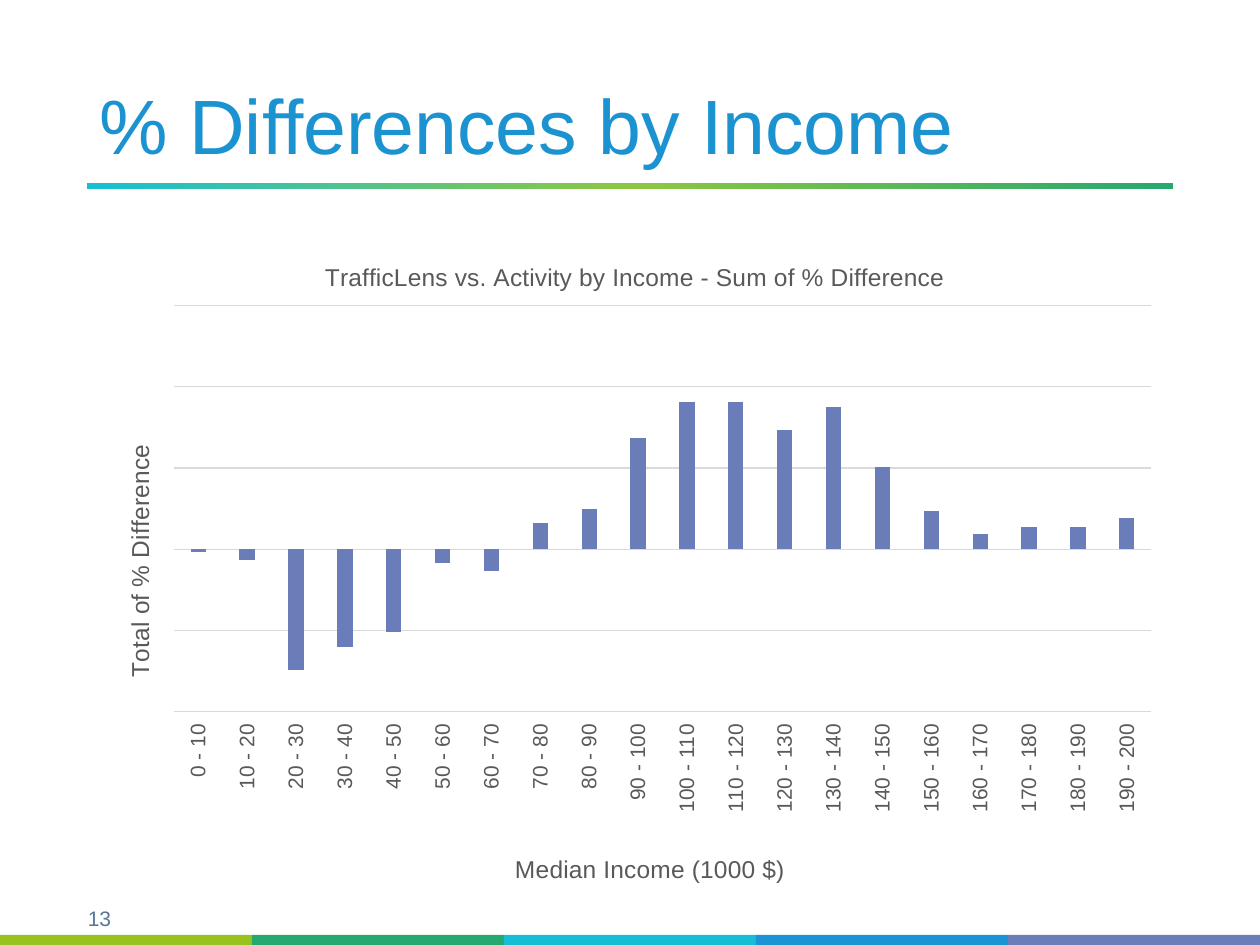
"""Build the slide on percentage differences by income."""
from copy import deepcopy

from lxml import etree
from pptx import Presentation
from pptx.chart.data import CategoryChartData
from pptx.dml.color import RGBColor
from pptx.enum.chart import XL_CHART_TYPE, XL_TICK_LABEL_POSITION, XL_TICK_MARK
from pptx.enum.shapes import MSO_SHAPE
from pptx.enum.text import MSO_ANCHOR, PP_ALIGN
from pptx.oxml.ns import qn
from pptx.util import Inches, Pt

COLUMN = XL_CHART_TYPE.COLUMN_CLUSTERED
LABELS_LOW = XL_TICK_LABEL_POSITION.LOW
LABELS_NONE = XL_TICK_LABEL_POSITION.NONE
TICKS_NONE = XL_TICK_MARK.NONE
RECTANGLE = MSO_SHAPE.RECTANGLE
BOTTOM = MSO_ANCHOR.BOTTOM
LEFT, CENTER = PP_ALIGN.LEFT, PP_ALIGN.CENTER

TITLE_BLUE = RGBColor(0x1C, 0x93, 0xD1)
NUMBER_BLUE = RGBColor(0x59, 0x77, 0x94)
COLUMN_BLUE = RGBColor(0x6B, 0x7D, 0xB8)
TEXT_GREY = RGBColor(0x59, 0x59, 0x59)
GRID_GREY = RGBColor(0xD9, 0xD9, 0xD9)
RULE_COLORS = [RGBColor(0x16, 0xBF, 0xD4), RGBColor(0x8D, 0xC7, 0x3F), RGBColor(0x26, 0xA8, 0x71)]
BAND_COLORS = [
    RGBColor(0x98, 0xC3, 0x1F),
    RGBColor(0x26, 0xA8, 0x71),
    RGBColor(0x16, 0xBE, 0xD5),
    RGBColor(0x1C, 0x93, 0xD2),
    RGBColor(0x6B, 0x7D, 0xB9),
]

MARGIN, CONTENT_WIDTH = 0.69, 8.62
GRID_STEP = 55
VERTICAL = "-5400000"
DIFFERENCES = [-2, -7, -82, -66, -56, -9, -15, 18, 27, 75,
               100, 100, 81, 96, 56, 26, 10, 15, 15, 21]


def set_all(target, values):
    """Set each attribute in a dict of format values."""
    for name, value in values.items():
        setattr(target, name, value)


def set_layout(element, **places):
    """Give a chart part a fixed place in fractions of the chart."""
    layout = element.find(qn("c:layout"))
    if layout is None:
        layout = etree.Element(qn("c:layout"))
        element.insert(0, layout)
    manual = etree.SubElement(layout, qn("c:manualLayout"))
    if "w" in places:
        etree.SubElement(manual, qn("c:layoutTarget"), val="inner")
    for name in ("x", "y"):
        etree.SubElement(manual, qn(f"c:{name}Mode"), val="edge")
    for name, value in places.items():
        etree.SubElement(manual, qn(f"c:{name}"), val=str(value))


class SlideBuilder:
    """Hold the style and the current slide."""

    font_name = "Arial"

    def __init__(self, slide):
        self.slide = slide

    def format_font(self, font, size, color):
        set_all(font, {"name": self.font_name, "size": Pt(size), "bold": False})
        font.color.rgb = color

    def title(self, text):
        shape = self.slide.shapes.title
        set_all(shape, {"left": Inches(MARGIN), "top": Inches(0.11),
                        "width": Inches(CONTENT_WIDTH), "height": Inches(1.3)})
        shape.text_frame.text = text
        shape.text_frame.vertical_anchor = BOTTOM
        paragraph = shape.text_frame.paragraphs[0]
        set_all(paragraph, {"alignment": LEFT, "line_spacing": 0.9})
        self.format_font(paragraph.runs[0].font, 44, TITLE_BLUE)

    def page_number(self, text):
        box = self.slide.shapes.add_textbox(Inches(0.55), Inches(7.14), Inches(0.48), Inches(0.3))
        box.text_frame.word_wrap = True
        paragraph = box.text_frame.paragraphs[0]
        set_all(paragraph, {"text": text, "alignment": CENTER})
        self.format_font(paragraph.runs[0].font, 12, NUMBER_BLUE)

    def bar(self, left, top, width, height, colors):
        shape = self.slide.shapes.add_shape(
            RECTANGLE, Inches(left), Inches(top), Inches(width), Inches(height))
        shape.shadow.inherit = False
        shape.line.fill.background()
        if len(colors) == 1:
            shape.fill.solid()
            shape.fill.fore_color.rgb = colors[0]
            return
        shape.fill.gradient()
        shape.fill.gradient_angle = 0
        stop_list = next(shape._element.iter(qn("a:gsLst")))
        for _ in colors[2:]:
            stop_list.append(deepcopy(stop_list[0]))
        for index, (stop, color) in enumerate(zip(shape.fill.gradient_stops, colors)):
            stop.position = index / (len(colors) - 1)
            stop.color.rgb = color

    def chart_title(self, title, text, x, y):
        title.text_frame.text = text
        self.format_font(title.text_frame.paragraphs[0].runs[0].font, 14, TEXT_GREY)
        set_layout(title._element, x=x, y=y)

    def grey_line(self, line):
        line.color.rgb = GRID_GREY
        line.width = Pt(0.75)

    def column_chart(self, categories, values):
        data = CategoryChartData()
        data.categories = categories
        data.add_series("Series 1", values)
        chart = self.slide.shapes.add_chart(
            COLUMN, Inches(MARGIN), Inches(1.83), Inches(CONTENT_WIDTH), Inches(5.24), data).chart
        chart.has_legend = False
        self.format_font(chart.font, 10, TEXT_GREY)
        set_layout(chart._chartSpace.chart.plotArea, x=0.08, y=0.114, w=0.9, h=0.618)

        plot = chart.plots[0]
        set_all(plot, {"gap_width": 219, "overlap": -27, "vary_by_categories": False})
        series = plot.series[0]
        series.invert_if_negative = False
        series.format.fill.solid()
        series.format.fill.fore_color.rgb = COLUMN_BLUE

        category_axis, value_axis = chart.category_axis, chart.value_axis
        ticks = {"major_tick_mark": TICKS_NONE, "minor_tick_mark": TICKS_NONE}
        set_all(category_axis, {**ticks, "tick_label_position": LABELS_LOW})
        set_all(value_axis, {**ticks, "tick_label_position": LABELS_NONE,
                             "minimum_scale": -2 * GRID_STEP, "maximum_scale": 3 * GRID_STEP,
                             "major_unit": GRID_STEP, "has_major_gridlines": True})
        self.format_font(category_axis.tick_labels.font, 12, TEXT_GREY)
        category_axis._element.txPr.bodyPr.set("rot", VERTICAL)
        self.grey_line(category_axis.format.line)
        self.grey_line(value_axis.major_gridlines.format.line)
        value_axis.format.line.fill.background()

        self.chart_title(chart.chart_title,
                         "TrafficLens vs. Activity by Income - Sum of % Difference", 0.215, 0.04)
        self.chart_title(category_axis.axis_title, "Median Income (1000 $)", 0.39, 0.94)
        self.chart_title(value_axis.axis_title, "Total of % Difference", 0.03, 0.32)
        next(value_axis.axis_title._element.iter(qn("a:bodyPr"))).set("rot", VERTICAL)


def main():
    presentation = Presentation()
    set_all(presentation, {"slide_width": Inches(10), "slide_height": Inches(7.5)})
    builder = SlideBuilder(presentation.slides.add_slide(presentation.slide_layouts[5]))
    builder.page_number("13")
    builder.bar(MARGIN, 1.45, CONTENT_WIDTH, 0.05, RULE_COLORS)
    for index, color in enumerate(BAND_COLORS):
        builder.bar(2 * index, 7.42, 2, 0.1, [color])
    builder.title("% Differences by Income")
    income_ranges = [f"{low} - {low + 10}" for low in range(0, 200, 10)]
    builder.column_chart(income_ranges, DIFFERENCES)
    presentation.save("out.pptx")


if __name__ == "__main__":
    main()
